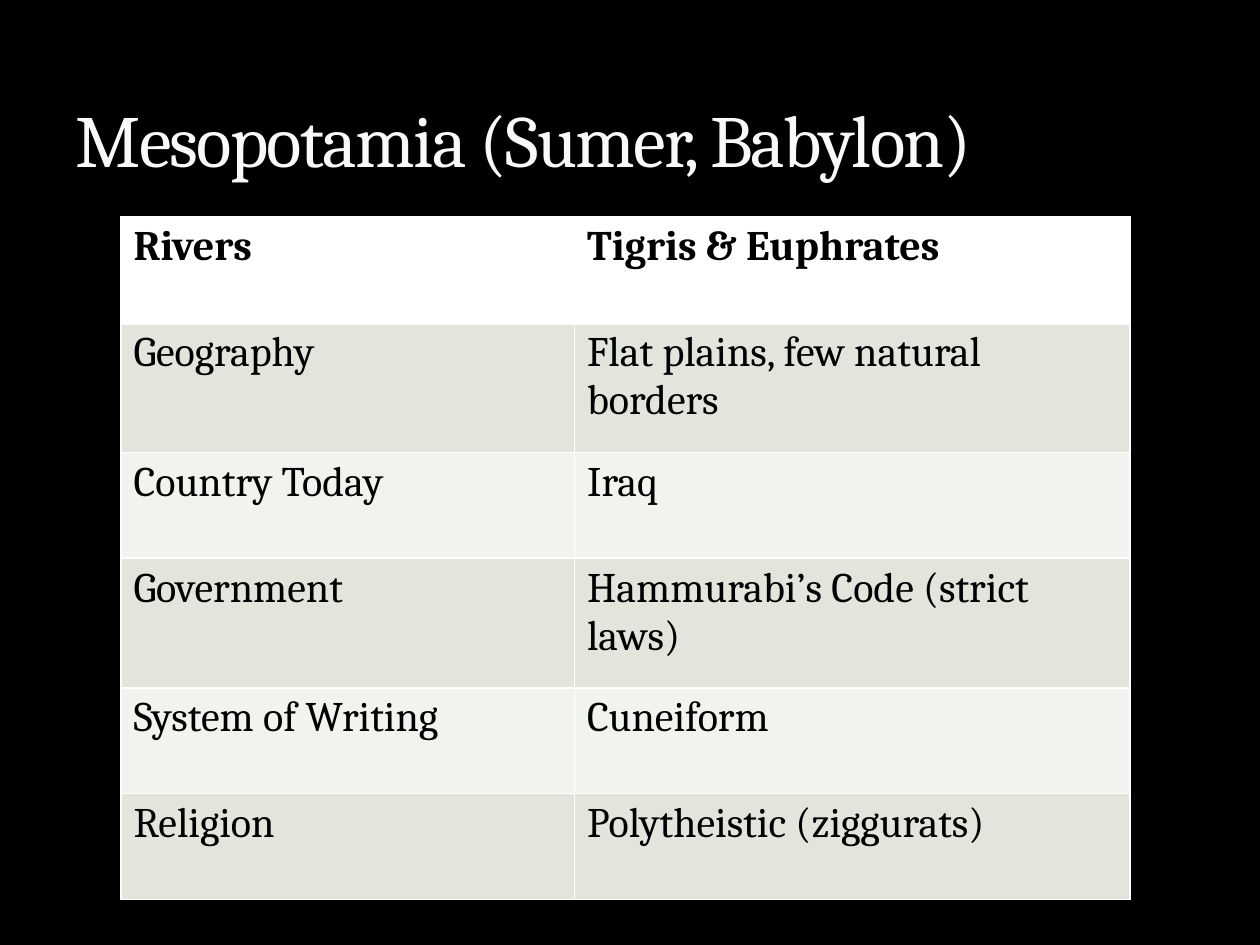
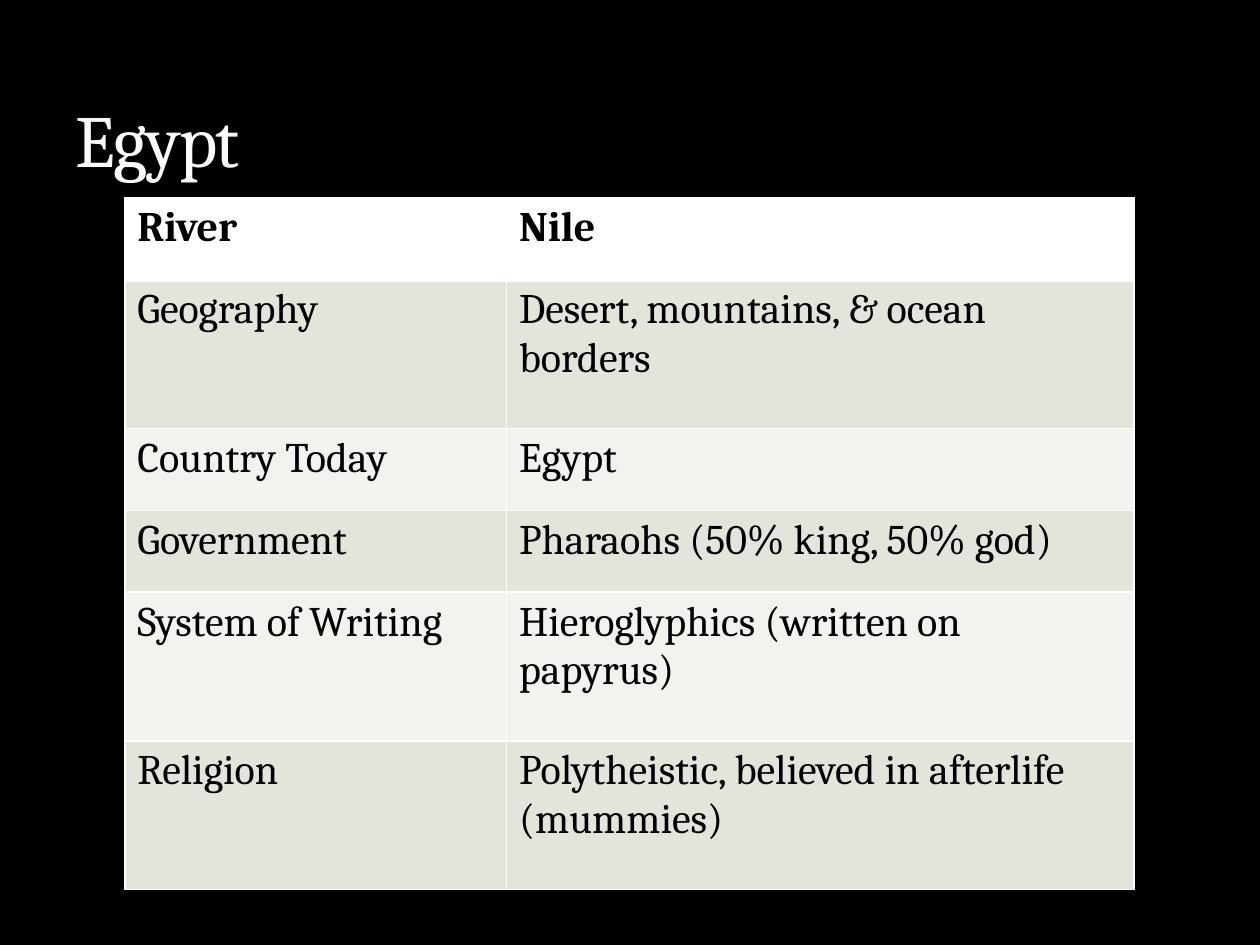
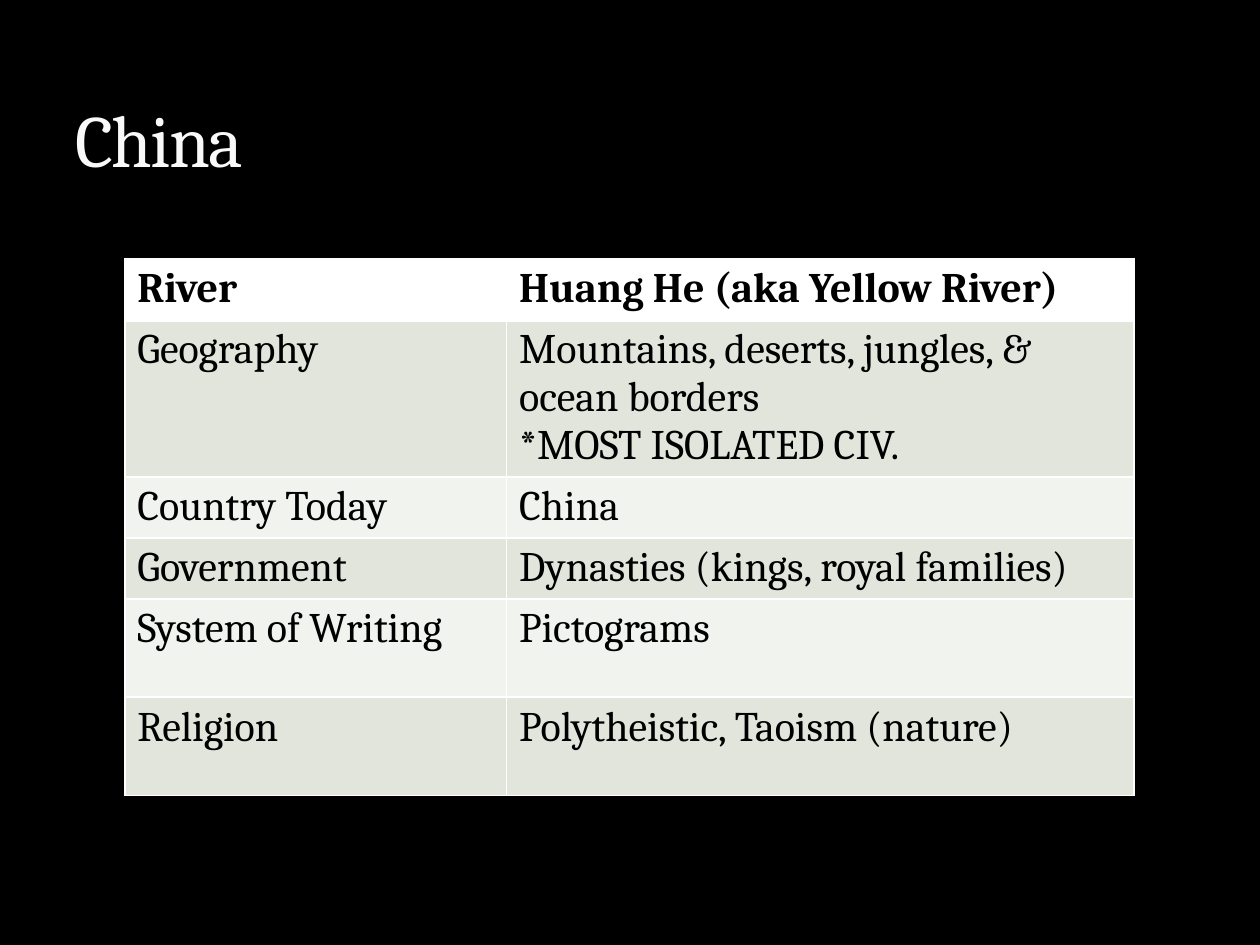
from dataclasses import dataclass

from lxml.etree import SubElement
from pptx import Presentation
from pptx.dml.color import RGBColor
from pptx.enum.text import MSO_ANCHOR, PP_ALIGN
from pptx.oxml import parse_xml
from pptx.oxml.ns import nsdecls, qn
from pptx.util import Inches, Pt


@dataclass(frozen=True)
class Theme:
    font: str = "Cambria"
    background: str = "000000"
    title: str = "F9F9F9"
    outline: str = "3C4422"
    text: str = "000000"
    header: str = "FFFFFF"
    border: str = "FFFFFF"
    bands: tuple = ("F0F3EE", "E1E5DC")
    title_size: int = 42
    cell_size: int = 24
    thin: int = 1
    thick: int = 3


T = Theme()


def add_run(p, text, size, color, bold=False):
    r = p.add_run()
    r.text = text
    r.font.name, r.font.size, r.font.bold = T.font, Pt(size), bold
    r.font.color.rgb = RGBColor.from_string(color)
    return r


def add_border(cell, side, width):
    ln = SubElement(cell._tc.get_or_add_tcPr(), qn(f"a:ln{side}"), w=str(Pt(width)))
    SubElement(SubElement(ln, qn("a:solidFill")), qn("a:srgbClr"), val=T.border)


# Content: what each civilization's table says and how it is laid out
LABELS = ["Geography", "Country Today", "Government", "System of Writing", "Religion"]
CIVILIZATIONS = [
    dict(title="Mesopotamia (Sumer, Babylon)", river="Rivers",
         left=0.96, top=1.72, cols=(3.6, 4.41),
         row=0.84, tall_row=1.03, tall={"Geography", "Government"},
         facts=["Tigris & Euphrates", "Flat plains, few natural borders", "Iraq",
                "Hammurabi’s Code (strict laws)", "Cuneiform",
                "Polytheistic (ziggurats)"]),
    dict(title="Egypt", river="River",
         left=0.99, top=1.57, cols=(3.03, 4.98),
         row=0.65, tall_row=1.18, tall={"Geography", "System of Writing", "Religion"},
         facts=["Nile", "Desert, mountains, & ocean borders", "Egypt",
                "Pharaohs (50% king, 50% god)", "Hieroglyphics (written on papyrus)",
                "Polytheistic, believed in afterlife (mummies)"]),
    dict(title="China", river="River",
         left=0.99, top=2.05, cols=(3.03, 4.98),
         row=0.43, tall_row=0.78, tall={"Geography", "System of Writing", "Religion"},
         facts=["Huang He (aka Yellow River)",
                "Mountains, deserts, jungles, & ocean borders\n*MOST ISOLATED CIV.",
                "China", "Dynasties (kings, royal families)", "Pictograms",
                "Polytheistic, Taoism (nature)"]),
]

# Presentation and shared background
prs = Presentation()
prs.slide_width, prs.slide_height = Inches(10), Inches(7.5)
W = prs.slide_width
fill = prs.slide_master.background.fill
fill.solid()
fill.fore_color.rgb = RGBColor.from_string(T.background)

for civ in CIVILIZATIONS:
    s = prs.slides.add_slide(prs.slide_layouts[5])

    # Title
    sp = s.shapes.title
    sp.left, sp.top = int(W * 0.05), Inches(0.17)
    sp.width, sp.height = int(W * 0.9), Inches(1.33)
    tf = sp.text_frame
    tf.vertical_anchor = MSO_ANCHOR.BOTTOM
    p = tf.paragraphs[0]
    p.alignment = PP_ALIGN.LEFT
    r = add_run(p, civ["title"], T.title_size, T.title)
    rPr = r._r.get_or_add_rPr()
    rPr.set("spc", "-100")
    rPr.insert(0, parse_xml(
        f'<a:ln {nsdecls("a")} w="{Pt(0.25)}"><a:solidFill><a:srgbClr val="{T.outline}">'
        '<a:alpha val="25000"/></a:srgbClr></a:solidFill></a:ln>'))

    # Table grid
    labels = [civ["river"], *LABELS]
    heights = [civ["tall_row"] if label in civ["tall"] else civ["row"] for label in labels]
    table = s.shapes.add_table(
        len(labels), 2, Inches(civ["left"]), Inches(civ["top"]),
        Inches(sum(civ["cols"])), Inches(sum(heights))).table
    table.horz_banding = False
    for column, width in zip(table.columns, civ["cols"]):
        column.width = Inches(width)

    # Table cells
    for i, record in enumerate(zip(labels, civ["facts"])):
        table.rows[i].height = Inches(heights[i])
        for j, text in enumerate(record):
            cell = table.cell(i, j)
            add_border(cell, "L", T.thin)
            add_border(cell, "R", T.thin)
            add_border(cell, "T", T.thick if i == 1 else T.thin)
            add_border(cell, "B", T.thick if i == 0 else T.thin)
            cell.fill.solid()
            cell.fill.fore_color.rgb = RGBColor.from_string(
                T.header if i == 0 else T.bands[i % 2])
            tf = cell.text_frame
            for n, line in enumerate(text.split("\n")):
                p = tf.add_paragraph() if n else tf.paragraphs[0]
                add_run(p, line, T.cell_size, T.text, bold=i == 0)

prs.save("out.pptx")
